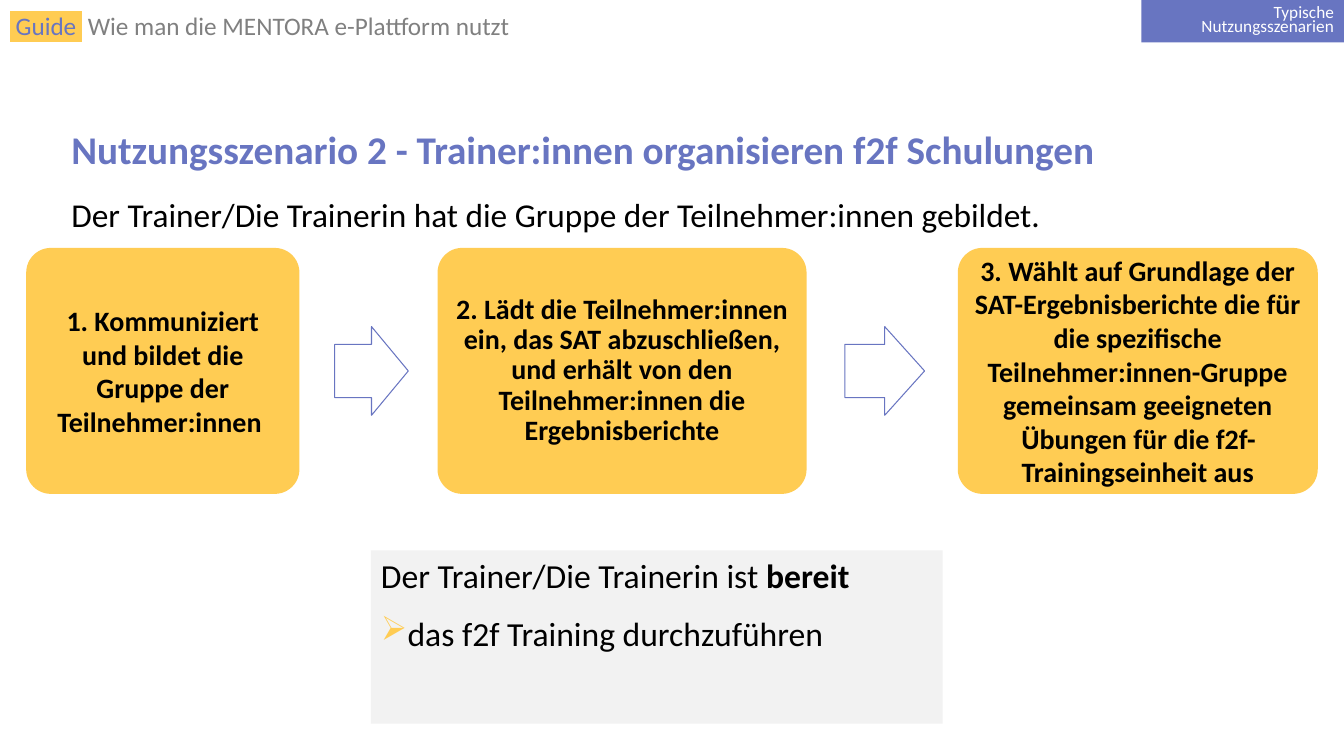
from lxml import etree
from pptx import Presentation
from pptx.dml.color import RGBColor
from pptx.enum.shapes import MSO_SHAPE
from pptx.enum.text import MSO_ANCHOR, PP_ALIGN
from pptx.oxml.ns import qn
from pptx.util import Inches, Pt

RECTANGLE, ROUNDED, ARROW = MSO_SHAPE.RECTANGLE, MSO_SHAPE.ROUNDED_RECTANGLE, MSO_SHAPE.RIGHT_ARROW
TOP, MIDDLE = MSO_ANCHOR.TOP, MSO_ANCHOR.MIDDLE
LEFT, CENTER, RIGHT = PP_ALIGN.LEFT, PP_ALIGN.CENTER, PP_ALIGN.RIGHT

THEME = {
    "font": "Calibri",
    "blue": "6875C1", "yellow": "FFCC53", "pale": "F2F2F2",
    "gray": "808080", "black": "000000", "white": "FFFFFF",
    "title": 28, "body": 24, "lead": 23.8, "card": 20, "header": 18, "tag": 12.3,
}

deck = Presentation()
deck.slide_width, deck.slide_height = Inches(13.33), Inches(7.5)
page = deck.slides.add_slide(deck.slide_layouts[6])


def add_box(left, top, width, height, preset=None, fill=None, line=None, anchor=TOP):
    """Add a text box, or a preset shape when one is named."""
    place = [Inches(length) for length in (left, top, width, height)]
    if preset is None:
        box = page.shapes.add_textbox(*place)
    else:
        box = page.shapes.add_shape(preset, *place)
        box.shadow.inherit = False
        if fill:
            box.fill.solid()
            box.fill.fore_color.rgb = RGBColor.from_string(THEME[fill])
        else:
            box.fill.background()
        if line:
            box.line.color.rgb = RGBColor.from_string(THEME[line])
            box.line.width = Pt(0.75)
        else:
            box.line.fill.background()
    box.text_frame.word_wrap = True
    box.text_frame.vertical_anchor = anchor
    box.text_frame.paragraphs[0].alignment = LEFT
    return box


def add_span(para, text, size, color="black", bold=False, highlight=None):
    """Add one run of text to a paragraph."""
    span = para.add_run()
    span.text = text
    span.font.size = Pt(THEME[size])
    span.font.bold = bold
    span.font.color.rgb = RGBColor.from_string(THEME[color])
    span.font.name = THEME["font"]
    if highlight:
        mark = etree.Element(qn("a:highlight"))
        etree.SubElement(mark, qn("a:srgbClr"), val=THEME[highlight])
        span.font.fill  # the highlight follows the text fill
        span._r.rPr.find(qn("a:solidFill")).addnext(mark)


# Header line
para = add_box(0, 0.11, 9.52, 0.35).text_frame.paragraphs[0]
para.line_spacing = 0.8
for text, color, highlight in [
    (" ", "white", "yellow"),
    ("Guide", "blue", "yellow"),
    (" ", "gray", "yellow"),
    (" Wie man die MENTORA e-Plattform nutzt", "gray", None),
]:
    add_span(para, text, "header", color, highlight=highlight)

# Section tag in the corner
tag = add_box(11.32, 0, 2.01, 0.42, RECTANGLE, "blue", anchor=MIDDLE)
para = tag.text_frame.paragraphs[0]
para.alignment, para.line_spacing = RIGHT, 0.7
add_span(para, "Typische Nutzungsszenarien", "tag", "white")

# Title and lead sentence
MARGIN = 0.61
para = add_box(MARGIN, 1.18, 12.1, 0.66, anchor=MIDDLE).text_frame.paragraphs[0]
para.line_spacing = 0.9
add_span(para, "Nutzungsszenario 2 - Trainer:innen organisieren f2f Schulungen",
         "title", "blue", bold=True)
para = add_box(MARGIN, 1.88, 10.4, 0.5).text_frame.paragraphs[0]
add_span(para, "Der Trainer/Die Trainerin hat die Gruppe der Teilnehmer:innen gebildet.", "lead")

# Process cards
ROW_TOP, ROW_HEIGHT = 2.46, 2.44
for left, width, spacing, text in [
    (0.26, 2.71, 1.0, "1. Kommuniziert und bildet die Gruppe der Teilnehmer:innen "),
    (4.34, 3.66, 0.9, "2. Lädt die Teilnehmer:innen ein, das SAT abzuschließen, und erhält "
                      "von den Teilnehmer:innen die Ergebnisberichte"),
    (9.5, 3.57, 1.0, "3. Wählt auf Grundlage der SAT-Ergebnisberichte die für die spezifische "
                     "Teilnehmer:innen-Gruppe gemeinsam geeigneten Übungen für die "
                     "f2f-Trainingseinheit aus"),
]:
    card = add_box(left, ROW_TOP, width, ROW_HEIGHT, ROUNDED, "yellow", anchor=MIDDLE)
    card.adjustments[0] = 0.1
    frame = card.text_frame
    frame.margin_left = frame.margin_right = Inches(0.08)
    frame.margin_top = frame.margin_bottom = Inches(0.08)
    para = frame.paragraphs[0]
    para.alignment, para.line_spacing = CENTER, spacing
    add_span(para, text, "card", bold=True)

# Arrows between the cards, centred on the row
ARROW_HEIGHT = 0.88
for left, width in [(3.32, 0.73), (8.38, 0.79)]:
    arrow = add_box(left, ROW_TOP + (ROW_HEIGHT - ARROW_HEIGHT) / 2, width, ARROW_HEIGHT,
                    ARROW, line="blue")
    arrow.adjustments[0], arrow.adjustments[1] = 0.6, 0.5

# Outcome panel
frame = add_box(3.68, 5.46, 5.67, 1.72, RECTANGLE, "pale").text_frame
para = frame.paragraphs[0]
para.space_after = Pt(6)
add_span(para, "Der Trainer/Die Trainerin ist ", "body")
add_span(para, "bereit", "body", bold=True)

para = frame.add_paragraph()
para.alignment = LEFT
para.space_before = para.space_after = Pt(6)
settings = para._p.get_or_add_pPr()
settings.set("marL", str(Inches(0.25)))
settings.set("indent", str(-Inches(0.25)))
bullet_color = etree.SubElement(settings, qn("a:buClr"))
etree.SubElement(bullet_color, qn("a:srgbClr"), val=THEME["yellow"])
etree.SubElement(settings, qn("a:buChar"), char="➢")
add_span(para, "das f2f Training durchzuführen", "body")

deck.save("out.pptx")
